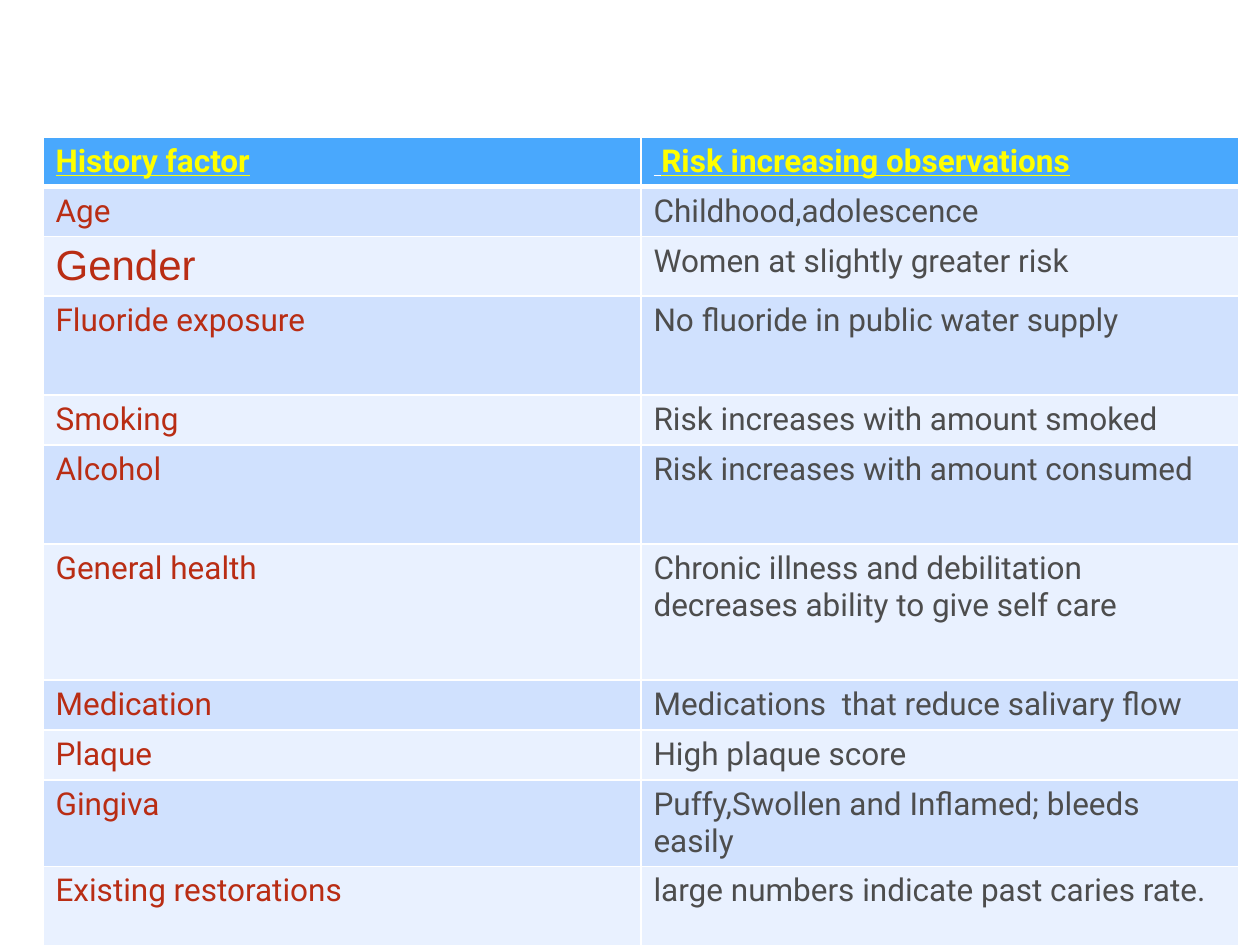
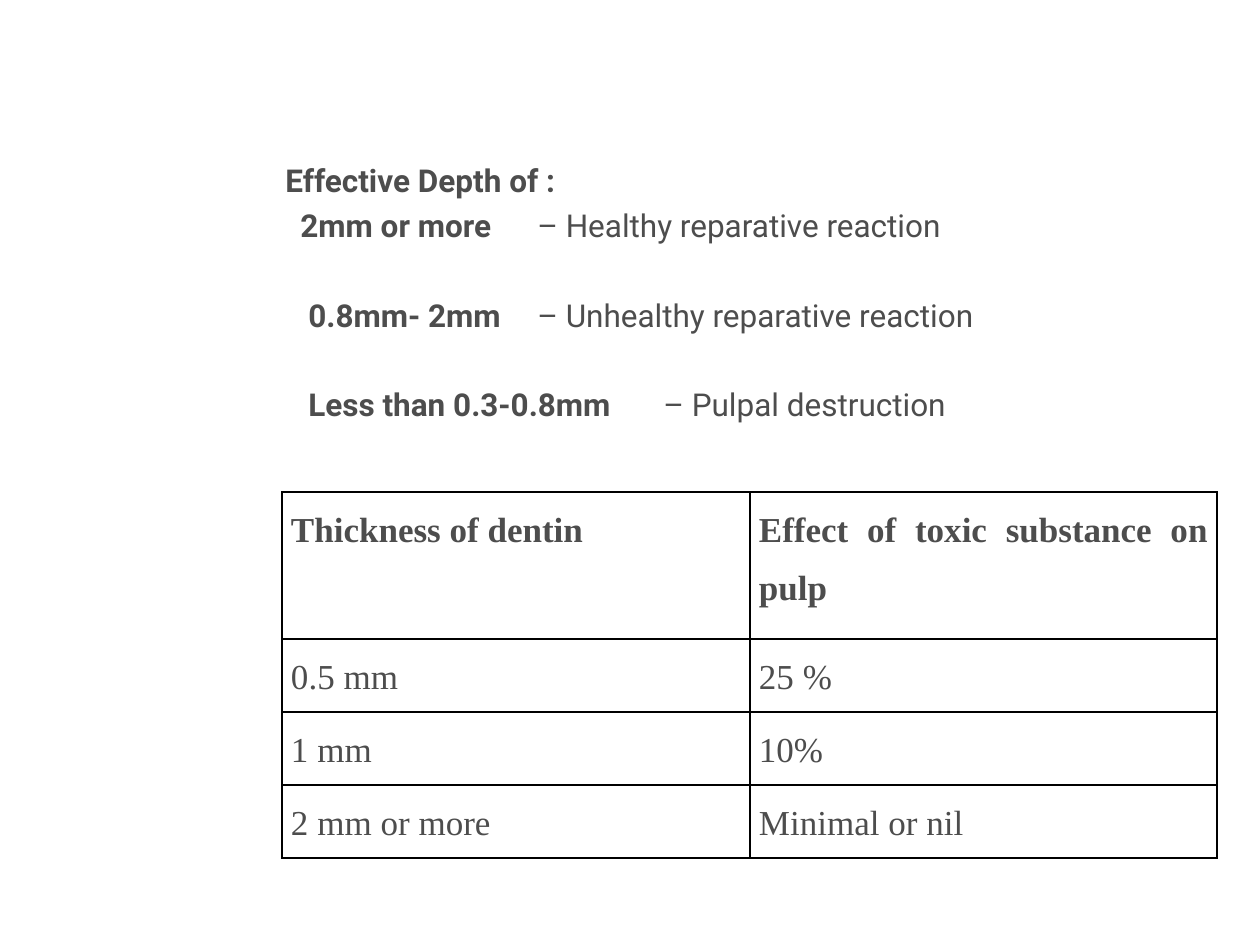
from lxml.etree import SubElement
from pptx import Presentation
from pptx.dml.color import RGBColor
from pptx.enum.text import PP_ALIGN
from pptx.oxml.ns import qn
from pptx.util import Pt

EMU_PER_PX = 914400 / 126
PAGE_WIDTH, PAGE_HEIGHT = 1260, 945

WHITE = RGBColor(0xFF, 0xFF, 0xFF)
BLACK = RGBColor(0x00, 0x00, 0x00)
GREY = RGBColor(0x4D, 0x4D, 0x4D)
RED = RGBColor(0xB9, 0x2D, 0x14)
YELLOW = RGBColor(0xFF, 0xFF, 0x00)
HEADER_BLUE = RGBColor(0x49, 0xA8, 0xFD)
BANDS = [RGBColor(0xD0, 0xE1, 0xFE), RGBColor(0xE9, 0xF1, 0xFF)]

RISK_ROWS = [
    ("Age", "Childhood,adolescence"),
    ("Gender", "Women at slightly greater risk"),
    ("Fluoride exposure", "No fluoride in public water supply"),
    ("Smoking", "Risk increases with amount smoked"),
    ("Alcohol", "Risk increases with amount consumed"),
    ("General health", "Chronic illness and debilitation decreases ability to give self care"),
    ("Medication", "Medications  that reduce salivary flow"),
    ("Plaque", "High plaque score"),
    ("Gingiva", "Puffy,Swollen and Inflamed; bleeds easily"),
    ("Existing restorations", "large numbers indicate past caries rate."),
]
RISK_HEIGHTS = [48, 50, 59, 99, 50, 99, 136, 50, 50, 86, 81]

# Depth, reaction, first-line indent, tab stop, space before in points
DEPTHS = [
    ("2mm or more", "– Healthy reparative reaction", 15, 302, 4.2),
    ("0.8mm- 2mm", "– Unhealthy reparative reaction", 23, 311, 29.5),
    ("Less than 0.3-0.8mm", "– Pulpal destruction", 23, 350, 29.5),
]
DENTIN_ROWS = [
    ("Thickness of dentin", "Effect of toxic substance on pulp"),
    ("0.5 mm", "25 %"),
    ("1 mm", "10%"),
    ("2 mm or more", "Minimal or nil"),
]


def px(length):
    return round(length * EMU_PER_PX)


class Page:
    """Holds the text style and the current slide."""

    def __init__(self, deck, font="Roboto", size=18):
        self.slide = deck.slides.add_slide(deck.slide_layouts[6])
        self.font, self.size = font, size

    def style(self, span, color=GREY, bold=False, underline=False, font=None, size=None):
        span.font.name = font or self.font
        span.font.size = Pt(size or self.size)
        span.font.color.rgb = color
        span.font.bold = bold
        span.font.underline = underline

    def spans(self, para, *parts):
        """Add (text, style) runs to a paragraph."""
        for text, look in parts:
            span = para.add_run()
            span.text = text
            self.style(span, **look)

    def text_box(self, left, top, width, height):
        box = self.slide.shapes.add_textbox(px(left), px(top), px(width), px(height))
        box.text_frame.word_wrap = True
        return box.text_frame

    def indent(self, para, first_line, tab):
        properties = para._p.get_or_add_pPr()
        properties.set("marL", "0")
        properties.set("indent", str(px(first_line)))
        stops = SubElement(properties, qn("a:tabLst"))
        SubElement(stops, qn("a:tab"), pos=str(px(tab)), algn="l")

    def table(self, left, top, widths, heights):
        frame = self.slide.shapes.add_table(
            len(heights), len(widths), px(left), px(top), px(sum(widths)), px(sum(heights)))
        table = frame.table
        table.first_row = table.horz_banding = False
        for column, width in zip(table.columns, widths):
            column.width = px(width)
        for row, height in zip(table.rows, heights):
            row.height = px(height)
        return table

    def cell(self, cell, border, fill=None, top=1, bottom=1):
        """Draw the four borders, then the fill."""
        properties = cell._tc.get_or_add_tcPr()
        for side, points in zip("LRTB", (1, 1, top, bottom)):
            line = SubElement(properties, qn(f"a:ln{side}"), w=str(Pt(points)))
            solid = SubElement(line, qn("a:solidFill"))
            SubElement(solid, qn("a:srgbClr"), val=str(border))
        if fill is None:
            cell.fill.background()
        else:
            cell.fill.solid()
            cell.fill.fore_color.rgb = fill
        return cell.text_frame.paragraphs[0]


def build_risk_page(deck):
    page = Page(deck)
    table = page.table(43, 137, [598, 598], RISK_HEIGHTS)

    # Header row
    heading = {"bold": True, "underline": True}
    yellow = {"color": YELLOW, **heading}
    headers = [
        [("History factor", yellow)],
        [(" ", {"color": WHITE, **heading}), ("Risk increasing observations", yellow)],
    ]
    for column, parts in enumerate(headers):
        para = page.cell(table.cell(0, column), WHITE, HEADER_BLUE, bottom=3)
        page.spans(para, *parts)

    # Banded rows
    for row, texts in enumerate(RISK_ROWS, start=1):
        for column, text in enumerate(texts):
            para = page.cell(table.cell(row, column), WHITE, BANDS[(row - 1) % 2],
                             top=3 if row == 1 else 1)
            look = {"color": (RED, GREY)[column]}
            if text == "Gender":
                look.update(font="Arial", size=24)
            page.spans(para, (text, look))


def build_depth_page(deck):
    page = Page(deck)

    # Depth list
    frame = page.text_box(273, 155, 955, 300)
    page.spans(frame.paragraphs[0], ("Effective Depth of :", {"bold": True}))
    for depth, reaction, first_line, tab, space in DEPTHS:
        para = frame.add_paragraph()
        para.space_before = Pt(space)
        page.indent(para, first_line, tab)
        page.spans(para, (depth + "\t", {"bold": True}), (reaction, {}))

    # Dentin table
    page.font, page.size = "Times New Roman", 20
    table = page.table(282, 492, [468, 467], [147, 73, 73, 73])
    for row, texts in enumerate(DENTIN_ROWS):
        for column, text in enumerate(texts):
            cell = table.cell(row, column)
            cell.margin_left = cell.margin_right = px(9)
            cell.margin_top = cell.margin_bottom = 0
            para = page.cell(cell, BLACK)
            para.alignment = PP_ALIGN.JUSTIFY
            para.line_spacing = 1.5
            page.spans(para, (text, {"bold": row == 0}))


def main():
    deck = Presentation()
    deck.slide_width, deck.slide_height = px(PAGE_WIDTH), px(PAGE_HEIGHT)
    build_risk_page(deck)
    build_depth_page(deck)
    deck.save("out.pptx")


if __name__ == "__main__":
    main()
